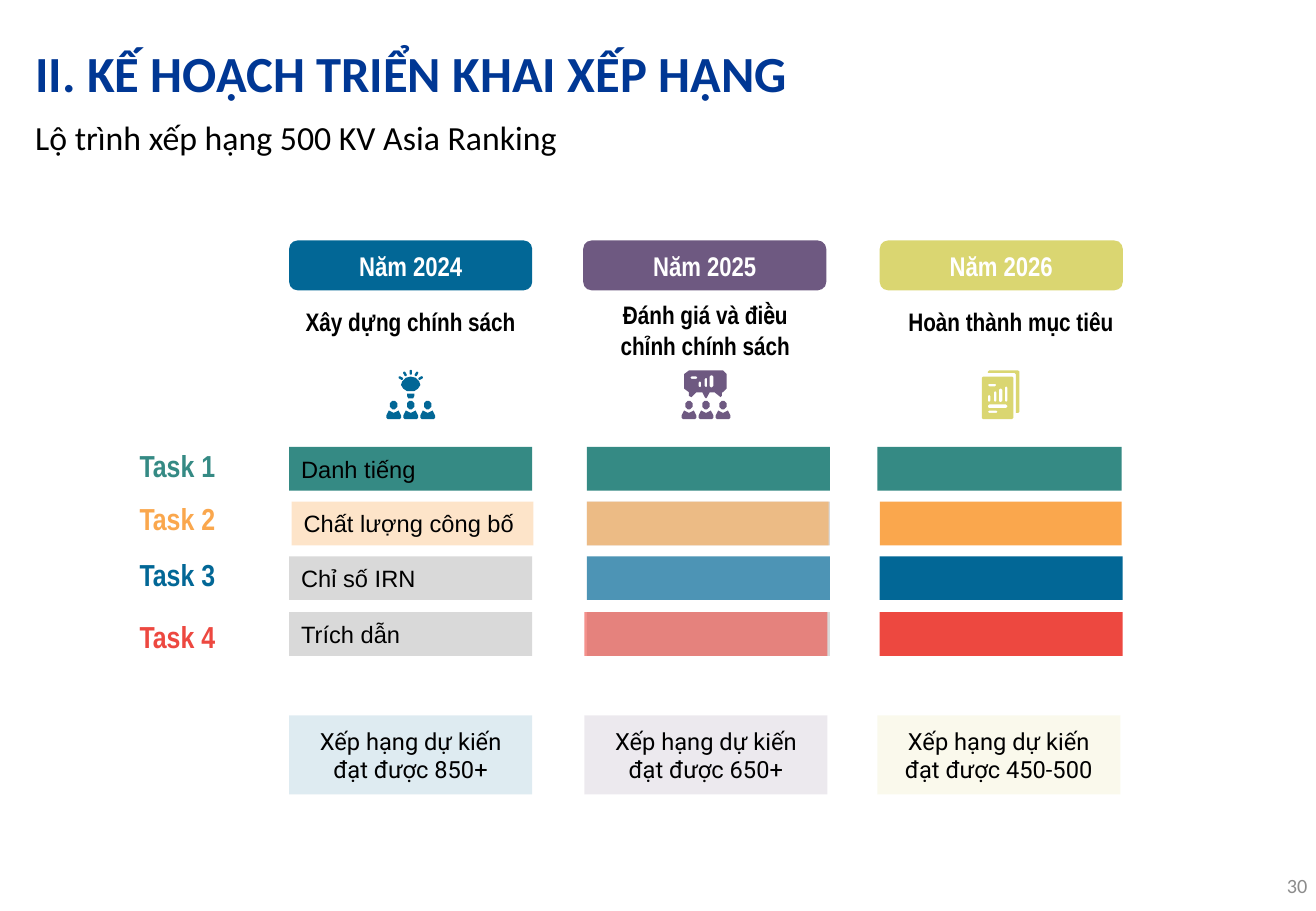
from math import cos, radians, sin

from lxml.etree import SubElement
from pptx import Presentation
from pptx.dml.color import RGBColor as Rgb
from pptx.enum.shapes import MSO_SHAPE as Shape
from pptx.enum.text import MSO_ANCHOR as Anchor, PP_ALIGN as Align
from pptx.oxml.ns import qn
from pptx.util import Pt

SCALE = 9144
HUES = {
    "title": "003794", "ink": "000000", "white": "FFFFFF", "page": "8C8C8C",
    "grey": "D9D9D9", "teal": "358A84", "amber": "FAA74D", "blue": "026796",
    "red": "ED4840", "plum": "6E5981", "lime": "DAD671",
}
YEARS = [
    ("Năm 2024", "blue", 238, "Xây dựng chính sách", (238, 247, 200, 36),
     "Xếp hạng dự kiến đạt được 850+", 238),
    ("Năm 2025", "plum", 480, "Đánh giá và điều chỉnh chính sách", (481, 247, 199, 49),
     "Xếp hạng dự kiến đạt được 650+", 481),
    ("Năm 2026", "lime", 724, "Hoàn thành mục tiêu", (732, 247, 200, 36),
     "Xếp hạng dự kiến đạt được 450-500", 722),
]
TASKS = [("Task 1", "teal", 365), ("Task 2", "amber", 409),
         ("Task 3", "blue", 455), ("Task 4", "red", 506)]
BARS = [
    (238, 368, 200, "teal", 100, "Danh tiếng"),
    (483, 368, 200, "teal", 100, ""),
    (722, 368, 201, "teal", 100, ""),
    (240, 413, 199, "amber", 30, "Chất lượng công bố"),
    (483, 413, 200, "grey", 100, ""),
    (483, 413, 199, "amber", 60, ""),
    (724, 413, 199, "amber", 100, ""),
    (238, 458, 200, "grey", 100, "Chỉ số IRN"),
    (483, 458, 200, "blue", 70, ""),
    (724, 458, 200, "blue", 100, ""),
    (238, 504, 200, "grey", 100, "Trích dẫn"),
    (483, 504, 200, "grey", 100, ""),
    (481, 504, 200, "red", 60, ""),
    (724, 504, 200, "red", 100, ""),
]
GLASS = [(338, 310), (334, 311), (331, 314), (330, 317), (332, 320), (335, 322),
         (341, 322), (344, 320), (346, 317), (345, 314), (342, 311)]
BASE = [(335, 324), (335, 326), (336, 328), (340, 328), (341, 326), (341, 324)]
BODY = [(2, 0), (0, 4), (0, 6), (1, 7), (11, 7), (12, 6), (12, 4), (10, 0),
        (8, 1), (6, 2), (4, 1)]
BUBBLE = [(567, 305), (595, 305), (598, 308), (598, 320), (595, 323), (594, 323),
          (594, 326), (593, 327), (588, 323), (584, 323), (582, 327), (581, 328),
          (580, 327), (578, 323), (573, 323), (569, 327), (567, 326), (567, 323),
          (563, 320), (563, 308)]
SHEET = [(813, 306), (814, 305), (838, 305), (839, 306), (839, 339), (838, 340),
         (836, 340), (836, 308), (835, 307), (813, 307)]


def emu(*vals):
    return [round(v * SCALE) for v in vals]


def tint(name):
    return Rgb.from_string(HUES[name])


def write(shape, text, font, size, hue="ink", bold=False, align=Align.LEFT, inset=10):
    frame = shape.text_frame
    frame.word_wrap = True
    frame.vertical_anchor = Anchor.MIDDLE
    frame.margin_left = frame.margin_right = inset * SCALE
    frame.margin_top = frame.margin_bottom = inset * SCALE
    para = frame.paragraphs[0]
    para.text = text
    para.alignment = align
    para.font.name = font
    para.font.size = Pt(size)
    para.font.bold = bold
    para.font.color.rgb = tint(hue)


def label(slide, box, text, font, size, **style):
    write(slide.shapes.add_textbox(*emu(*box)), text, font, size, **style)


def paint(shape, hue, alpha=100):
    shape.shadow.inherit = False
    shape.fill.solid()
    shape.fill.fore_color.rgb = tint(hue)
    shape.line.fill.background()
    if alpha < 100:
        color = shape.element.find(".//" + qn("a:srgbClr"))
        SubElement(color, qn("a:alpha")).set("val", str(alpha * 1000))


def block(slide, box, hue, alpha=100, kind=Shape.RECTANGLE):
    shape = slide.shapes.add_shape(kind, *emu(*box))
    paint(shape, hue, alpha)
    return shape


def trace(slide, hue, *loops):
    first, *rest = loops
    pen = slide.shapes.build_freeform(*first[0], scale=SCALE)
    pen.add_line_segments(first[1:], close=True)
    for loop in rest:
        pen.move_to(*loop[0])
        pen.add_line_segments(loop[1:], close=True)
    paint(pen.convert_to_shape(), hue)


def pill(x, y, w, h, cut=1):
    r, b = x + w, y + h
    return [(x + cut, y), (r - cut, y), (r, y + cut), (r, b - cut),
            (r - cut, b), (x + cut, b), (x, b - cut), (x, y + cut)]


def crowd(slide, left, hue):
    for x in range(left, left + 42, 14):
        trace(slide, hue, pill(x + 3, 330, 6, 7, 2))
        trace(slide, hue, [(x + dx, 338 + dy) for dx, dy in BODY])


def idea(slide):
    for turn in range(30, 151, 30):
        x = 338 + 9.5 * cos(radians(turn))
        y = 316 - 9.5 * sin(radians(turn))
        ray = block(slide, (x - 2, y - 1, 4, 2), "blue", kind=Shape.ROUNDED_RECTANGLE)
        ray.adjustments[0] = 0.5
        ray.rotation = -turn
    trace(slide, "blue", GLASS)
    trace(slide, "blue", BASE)
    crowd(slide, 318, "blue")


def review(slide):
    trace(slide, "plum", BUBBLE, pill(568, 310, 6, 2), pill(575, 314, 2, 5),
          pill(580, 311, 2, 8), pill(584, 309, 3, 10))
    crowd(slide, 561, "plum")


def report(slide):
    trace(slide, "lime", SHEET)
    trace(slide, "lime", pill(808, 310, 26, 35), pill(813, 316, 7, 2),
          pill(813, 325, 2, 6), pill(818, 322, 2, 9), pill(822, 320, 3, 11),
          pill(827, 318, 2, 13), pill(813, 333, 16, 3), pill(813, 338, 8, 2))


def year(slide, name, hue, left, goal, box, rank, foot):
    head = block(slide, (left, 198, 200, 41), hue, kind=Shape.ROUNDED_RECTANGLE)
    write(head, name, "Arial Narrow", 16, hue="white", bold=True, align=Align.CENTER)
    label(slide, box, goal, "Arial Narrow", 15, bold=True, align=Align.CENTER)
    base = block(slide, (foot, 589, 200, 65), hue, 13)
    write(base, rank, "Roboto", 14, align=Align.CENTER)


def main():
    deck = Presentation()
    deck.slide_width, deck.slide_height = emu(1083, 750)
    slide = deck.slides.add_slide(deck.slide_layouts[6])
    label(slide, (29, 26, 1026, 67), "II. KẾ HOẠCH TRIỂN KHAI XẾP HẠNG", "Calibri", 30,
          hue="title", bold=True, inset=0)
    label(slide, (29, 94, 1026, 37), "Lộ trình xếp hạng 500 KV Asia Ranking",
          "Calibri", 20, inset=0)
    label(slide, (886, 709, 190, 39), "30", "Calibri", 12,
          hue="page", align=Align.RIGHT, inset=0)
    for name, hue, top in TASKS:
        label(slide, (105, top, 117, 36), name, "Arial Narrow", 18, hue=hue, bold=True)
    for left, top, wide, hue, alpha, text in BARS:
        bar = block(slide, (left, top, wide, 36), hue, alpha)
        if text:
            write(bar, text, "Arial", 14)
    for draw in (idea, review, report):
        draw(slide)
    for item in YEARS:
        year(slide, *item)
    deck.save("out.pptx")


if __name__ == "__main__":
    main()
